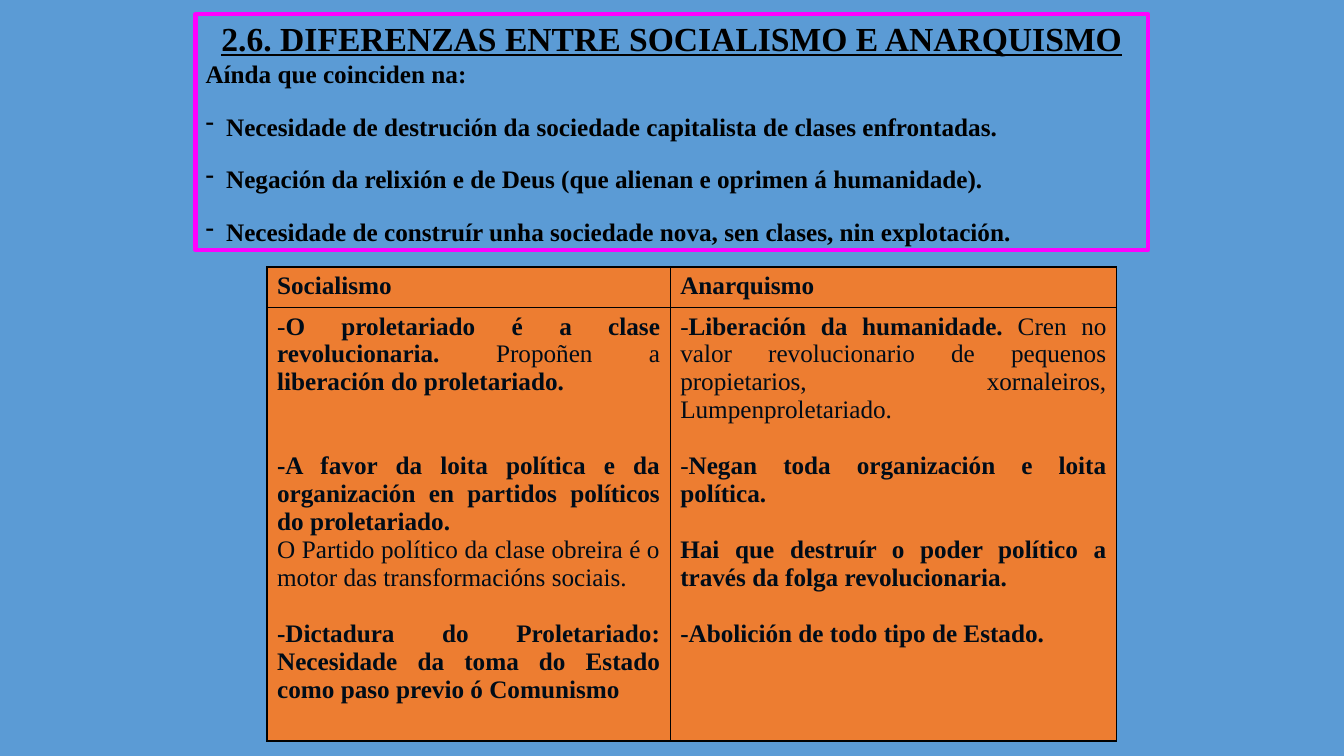
from lxml import etree
from pptx import Presentation
from pptx.dml.color import RGBColor
from pptx.enum.shapes import MSO_SHAPE
from pptx.enum.text import MSO_ANCHOR, PP_ALIGN
from pptx.oxml.ns import qn
from pptx.util import Cm, Pt

RECTANGLE = MSO_SHAPE.RECTANGLE
MIDDLE = MSO_ANCHOR.MIDDLE
CENTER = PP_ALIGN.CENTER
JUSTIFY = PP_ALIGN.JUSTIFY

COLORS = {
    "background": "5B9BD5",
    "frame": "FF00FF",
    "heading": "000000",
    "cell": "ED7D31",
    "cell_text": "000C18",
    "border": "000000",
}
FONT = "Times New Roman"
BODY_SIZE = 18
BULLET_GAP = 16
LINE_GAP = 20

SHARED_AIMS = [
    "Necesidade de destrución da sociedade capitalista de clases enfrontadas.",
    "Negación da relixión e de Deus (que alienan e oprimen á humanidade).",
    "Necesidade de construír unha sociedade nova, sen clases, nin explotación.",
]

SOCIALISM = [
    (0, [("-", False), ("O proletariado é a clase revolucionaria. ", True),
         ("Propoñen a ", False), ("liberación do proletariado.", True)]),
    (2, [("-A favor da loita política e da organización en partidos políticos "
          "do proletariado.", True)]),
    (0, [("O Partido político da clase obreira é o motor das transformacións "
          "sociais.", False)]),
    (1, [("-Dictadura do Proletariado: Necesidade da toma do Estado como paso "
          "previo ó Comunismo", True)]),
]
ANARCHISM = [
    (0, [("-", False), ("Liberación da humanidade. ", True),
         ("Cren no valor revolucionario de pequenos propietarios, xornaleiros, "
          "Lumpenproletariado.", False)]),
    (1, [("-", False), ("Negan toda organización e loita política.", True)]),
    (1, [("Hai que destruír o poder político a través da folga "
          "revolucionaria.", True)]),
    (1, [("-Abolición de todo tipo de Estado.", True)]),
]
COMPARISON = [
    [[(0, [("Socialismo", True)])], [(0, [("Anarquismo", True)])]],
    [SOCIALISM, ANARCHISM],
]


def color(name):
    return RGBColor.from_string(COLORS[name])


def add_span(para, text, color_name, size=BODY_SIZE, bold=True, underline=False):
    span = para.add_run()
    span.text = text
    span.font.name = FONT
    span.font.size = Pt(size)
    span.font.bold = bold
    span.font.underline = underline
    span.font.color.rgb = color(color_name)


def next_paragraph(frame, align=JUSTIFY, gap=0):
    first = frame.paragraphs[0]
    para = frame.add_paragraph() if first.runs else first
    para.alignment = align
    para.space_before = Pt(gap)
    return para


def add_bullet(para, mark, indent):
    properties = para._p.get_or_add_pPr()
    properties.set("marL", str(indent))
    properties.set("indent", str(-indent))
    etree.SubElement(properties, qn("a:buChar")).set("char", mark)


def add_heading_box(page):
    box = page.shapes.add_shape(RECTANGLE, Cm(4.93), Cm(0.36), Cm(24), Cm(5.94))
    box.shadow.inherit = False
    box.fill.background()
    box.line.color.rgb = color("frame")
    box.line.width = Pt(3)
    frame = box.text_frame
    frame.word_wrap = True
    frame.vertical_anchor = MIDDLE
    add_span(next_paragraph(frame, CENTER),
             "2.6. DIFERENZAS ENTRE SOCIALISMO E ANARQUISMO",
             "heading", size=24, underline=True)
    add_span(next_paragraph(frame), "Aínda que coinciden na:", "heading")
    for aim in SHARED_AIMS:
        para = next_paragraph(frame, gap=BULLET_GAP)
        add_bullet(para, "-", Cm(0.52))
        add_span(para, aim, "heading")


def add_borders(cell):
    properties = cell._tc.get_or_add_tcPr()
    for side in ("a:lnL", "a:lnR", "a:lnT", "a:lnB"):
        line = etree.SubElement(properties, qn(side))
        line.set("w", str(Pt(1)))
        fill = etree.SubElement(line, qn("a:solidFill"))
        etree.SubElement(fill, qn("a:srgbClr")).set("val", COLORS["border"])


def fill_cell(cell, content):
    add_borders(cell)
    cell.fill.solid()
    cell.fill.fore_color.rgb = color("cell")
    for blank_lines, spans in content:
        para = next_paragraph(cell.text_frame, gap=blank_lines * LINE_GAP)
        for text, bold in spans:
            add_span(para, text, "cell_text", bold=bold)


def add_comparison_table(page):
    widths = [Cm(10.16), Cm(11.25)]
    heights = [Cm(1.02), Cm(10.92)]
    table = page.shapes.add_table(len(heights), len(widths), Cm(6.73), Cm(6.73),
                                  sum(widths), sum(heights)).table
    for column, width in zip(table.columns, widths):
        column.width = width
    for row, height, contents in zip(table.rows, heights, COMPARISON):
        row.height = height
        for cell, content in zip(row.cells, contents):
            fill_cell(cell, content)


def main():
    deck = Presentation()
    deck.slide_width = Cm(33.87)
    deck.slide_height = Cm(19.05)
    page = deck.slides.add_slide(deck.slide_layouts[6])
    page.background.fill.solid()
    page.background.fill.fore_color.rgb = color("background")
    add_heading_box(page)
    add_comparison_table(page)
    deck.save("out.pptx")


if __name__ == "__main__":
    main()
